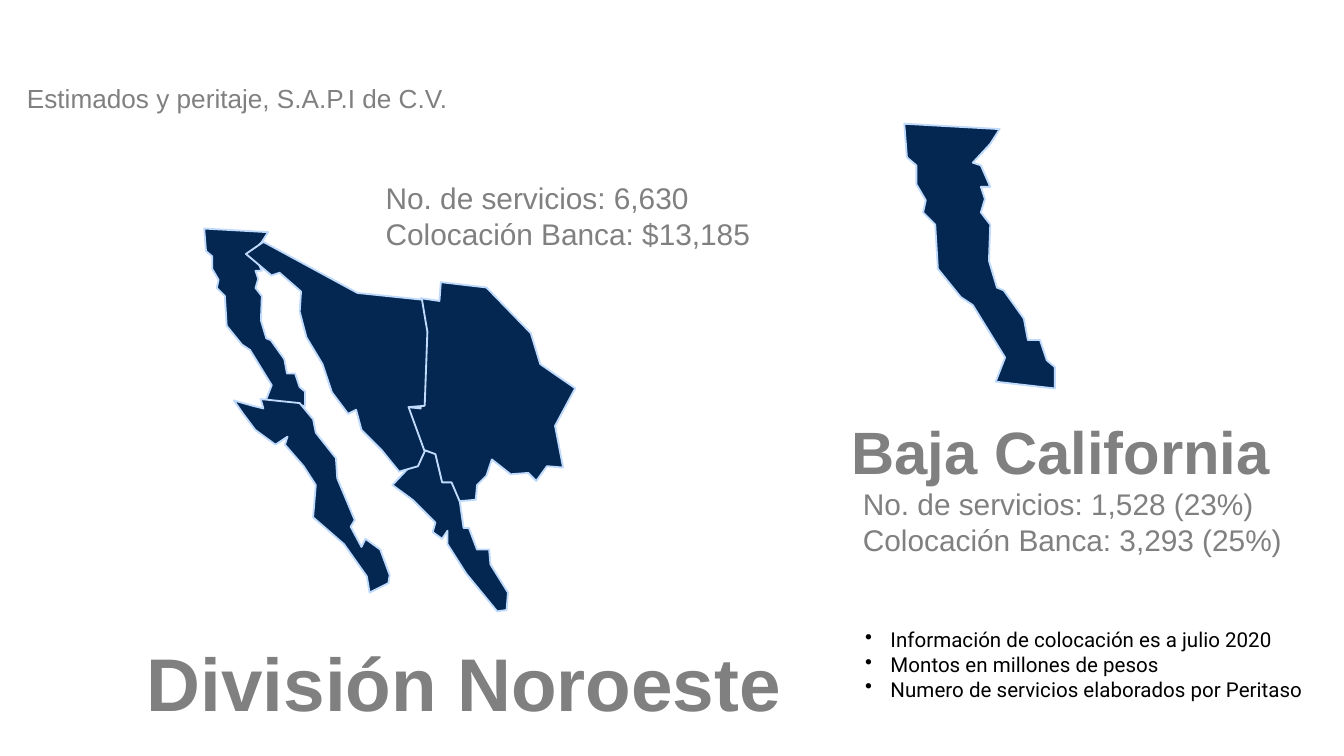
import pptx
import pptx.util
import pptx.dml.color
import pptx.enum.text
import pptx.oxml.ns
from lxml import etree

Cm = pptx.util.Cm
Pt = pptx.util.Pt
ALIGN = pptx.enum.text.PP_ALIGN
ANCHOR = pptx.enum.text.MSO_ANCHOR

COLORS = {"state": "042752", "border": "BFDAFB", "gray": "808080", "black": "000000"}

TITLE = dict(lines=["División Noroeste"], box=(1.7, 11.89, 13.06, 1.98), size=40,
             bold=True, align=ALIGN.RIGHT, anchor=ANCHOR.MIDDLE)
TEXTS = [
    dict(lines=["Estimados y peritaje, S.A.P.I de C.V."], box=(0.51, 1.55, 11.02, 1.14), size=14),
    dict(lines=["Baja California"], box=(15.09, 7.77, 8.92, 1.68), size=32, bold=True,
         align=ALIGN.RIGHT, anchor=ANCHOR.MIDDLE, spacing=0.9),
    dict(lines=["No. de servicios: 1,528 (23%)", "Colocación Banca: 3,293 (25%)"],
         box=(16.31, 9.17, 8.61, 2.72), size=16, spacing=Pt(19.3)),
    dict(lines=["No. de servicios: 6,630", "Colocación Banca: $13,185"],
         box=(7.29, 3.4, 7.47, 1.75), size=16, spacing=Pt(19.3)),
    dict(lines=["Información de colocación es a julio 2020", "Montos en millones de pesos",
                "Numero de servicios elaborados por Peritaso"],
         box=(16.1, 11.73, 8.99, 1.68), size=11, font="Roboto", color="black",
         margins=(0.25, 0.13), bullet="•"),
]

MAP_UNIT = Cm(0.0254)
SINALOA = [
    (309, 343), (315, 335), (324, 337), (329, 358), (336, 358), (342, 372), (345, 393),
    (349, 393), (355, 409), (364, 409), (365, 420), (378, 441), (377, 454), (370, 455),
    (347, 427), (333, 405), (333, 395), (329, 401), (322, 396), (324, 389), (307, 372), (292, 361),
]
BAJA_CALIFORNIA = [
    (0, 0), (2, 25), (9, 31), (9, 45), (16, 57), (14, 66), (23, 75), (25, 108), (42, 129),
    (51, 135), (75, 174), (68, 192), (112, 197), (112, 181), (106, 176), (101, 161), (92, 161),
    (89, 145), (74, 124), (69, 122), (63, 102), (64, 75), (57, 66), (60, 56), (57, 47),
    (64, 47), (57, 31), (51, 29), (64, 15), (71, 4),
]
BAJA_CALIFORNIA_SUR = [
    (194, 297), (196, 304), (188, 302), (174, 298), (181, 308), (190, 320), (205, 331),
    (214, 325), (212, 331), (226, 347), (235, 361), (233, 385), (256, 405), (273, 429),
    (275, 441), (289, 434), (290, 428), (283, 409), (272, 401), (269, 407), (261, 392),
    (264, 387), (251, 356), (250, 341), (235, 322), (233, 312), (223, 300),
]
CHIHUAHUA = [
    (313, 222), (327, 224), (328, 210), (362, 214), (395, 248), (402, 271), (428, 289),
    (413, 317), (419, 348), (407, 347), (399, 358), (393, 352), (380, 353), (366, 342),
    (362, 354), (355, 361), (354, 372), (342, 373), (336, 359), (329, 359), (324, 338),
    (313, 334), (303, 303), (313, 304), (317, 246),
]
SONORA = [
    (196, 180), (266, 218), (314, 223), (318, 247), (316, 302), (304, 303), (316, 336),
    (311, 347), (297, 351), (284, 335), (269, 320), (265, 305), (259, 308), (247, 292),
    (240, 271), (228, 251), (223, 232), (224, 217), (208, 203), (202, 205), (183, 189),
]
STATES = [
    (SINALOA, (0, 0), 1),
    (BAJA_CALIFORNIA, (3.86, 4.32), 0.67),
    (BAJA_CALIFORNIA_SUR, (0, 0), 1),
    (CHIHUAHUA, (0, 0), 1),
    (SONORA, (0, 0), 1),
    (BAJA_CALIFORNIA, (17.09, 2.34), 1),
]


def rgb(name):
    return pptx.dml.color.RGBColor.from_string(COLORS[name])


def draw_state(slide, outline, origin, scale):
    builder = slide.shapes.build_freeform(*outline[0], scale=MAP_UNIT * scale)
    builder.add_line_segments(outline[1:], close=True)
    shape = builder.convert_to_shape(Cm(origin[0]), Cm(origin[1]))
    shape.shadow.inherit = False
    shape.fill.solid()
    shape.fill.fore_color.rgb = rgb("state")
    shape.line.color.rgb = rgb("border")
    shape.line.width = Pt(1)


def add_bullet(paragraph, character):
    properties = paragraph._p.get_or_add_pPr()
    properties.set("marL", str(Cm(0.48)))
    properties.set("indent", str(-Cm(0.48)))
    bullet = etree.SubElement(properties, pptx.oxml.ns.qn("a:buChar"))
    bullet.set("char", character)


def write_text(shape, lines, box, size, font="Arial", color="gray", bold=False, align=ALIGN.LEFT,
               anchor=ANCHOR.TOP, spacing=1.0, margins=(0, 0), bullet=None):
    shape.left, shape.top, shape.width, shape.height = map(Cm, box)
    frame = shape.text_frame
    frame.word_wrap = True
    frame.auto_size = pptx.enum.text.MSO_AUTO_SIZE.NONE
    frame.vertical_anchor = anchor
    frame.margin_left = frame.margin_right = Cm(margins[0])
    frame.margin_top = frame.margin_bottom = Cm(margins[1])
    frame.text = "\n".join(lines)
    for paragraph in frame.paragraphs:
        if bullet:
            add_bullet(paragraph, bullet)
        paragraph.alignment = align
        paragraph.line_spacing = spacing
        paragraph.font.name = font
        paragraph.font.size = Pt(size)
        paragraph.font.bold = bold
        paragraph.font.color.rgb = rgb(color)


def main():
    presentation = pptx.Presentation()
    presentation.slide_width, presentation.slide_height = Cm(25.4), Cm(14.29)
    slide = presentation.slides.add_slide(presentation.slide_layouts[5])
    write_text(slide.shapes.title, **TITLE)
    for outline, origin, scale in STATES:
        draw_state(slide, outline, origin, scale)
    for text in TEXTS:
        write_text(slide.shapes.add_textbox(0, 0, 0, 0), **text)
    presentation.save("out.pptx")


if __name__ == "__main__":
    main()
